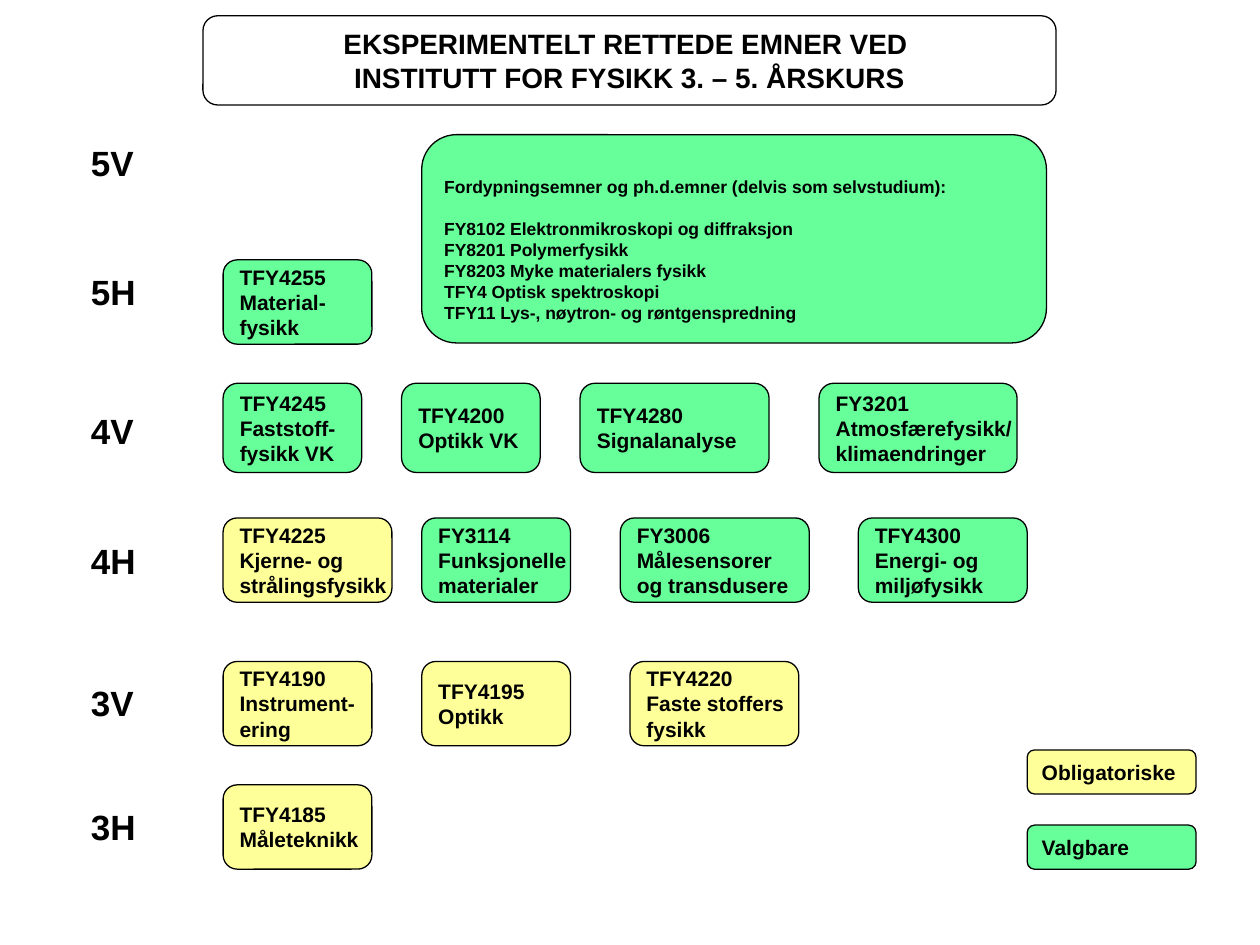
"""Build the one-slide overview of experimental physics courses by term."""
from pptx import Presentation
from pptx import util as u
from pptx.dml import color
from pptx.enum import shapes, text

COLORS = {"required": "FFFF99", "elective": "66FF99", "ink": "000000"}
LABEL_LEFT, FIRST_LEFT, SECOND_LEFT = 42.5, 127.5, 241
LABEL_WIDTH, BOX_HEIGHT = 85, 48.2

TERMS = [("5V", 69), ("5H", 142.5), ("4V", 222), ("4H", 296), ("3V", 377.5), ("3H", 448.5)]

COURSE_ROWS = [
    (148.5, BOX_HEIGHT, [
        (FIRST_LEFT, 85, "elective", ["TFY4255", "Material-", "fysikk"])]),
    (219, 51, [
        (FIRST_LEFT, 79.2, "elective", ["TFY4245", "Faststoff-", "fysikk VK"]),
        (229.5, 79.2, "elective", ["TFY4200", "Optikk VK"]),
        (331.5, 108, "elective", ["TFY4280", "Signalanalyse"]),
        (468, 113.2, "elective", ["FY3201", "Atmosfærefysikk/", "klimaendringer"])]),
    (296, BOX_HEIGHT, [
        (FIRST_LEFT, 96.5, "required", ["TFY4225", "Kjerne- og", "strålingsfysikk"]),
        (SECOND_LEFT, 85, "elective", ["FY3114", "Funksjonelle", "materialer"]),
        (354.5, 108, "elective", ["FY3006", "Målesensorer", "og transdusere"]),
        (490.5, 96.5, "elective", ["TFY4300", "Energi- og", "miljøfysikk"])]),
    (378, BOX_HEIGHT, [
        (FIRST_LEFT, 85, "required", ["TFY4190", "Instrument-", "ering"]),
        (SECOND_LEFT, 85, "required", ["TFY4195", "Optikk"]),
        (360, 96.5, "required", ["TFY4220", "Faste stoffers", "fysikk"])]),
    (448.5, BOX_HEIGHT, [
        (FIRST_LEFT, 85, "required", ["TFY4185", "Måleteknikk"])]),
]

LEGEND = [("required", "Obligatoriske"), ("elective", "Valgbare")]

TITLE = ["EKSPERIMENTELT RETTEDE EMNER VED ", "INSTITUTT FOR FYSIKK 3. – 5. ÅRSKURS"]

ADVANCED = [
    "Fordypningsemner og ph.d.emner (delvis som selvstudium):",
    "FY8102 Elektronmikroskopi og diffraksjon",
    "FY8201 Polymerfysikk",
    "FY8203 Myke materialers fysikk",
    "TFY4 Optisk spektroskopi",
    "TFY11 Lys-, nøytron- og røntgenspredning",
]


def rgb(name):
    return color.RGBColor.from_string(COLORS[name])


def write_lines(frame, lines, size, align):
    for index, line in enumerate(lines):
        para = frame.paragraphs[0] if index == 0 else frame.add_paragraph()
        para.alignment = align
        span = para.add_run()
        span.text = line
        font_format = {"name": "Arial", "size": u.Pt(size), "bold": True}
        for key, value in font_format.items():
            setattr(span.font, key, value)
        span.font.color.rgb = rgb("ink")


def add_box(page, place, lines, fill=None, outlined=True, size=12, align=text.PP_ALIGN.LEFT):
    box = page.shapes.add_shape(
        shapes.MSO_SHAPE.FLOWCHART_ALTERNATE_PROCESS, *(u.Pt(length) for length in place))
    box.shadow.inherit = False
    if fill:
        box.fill.solid()
        box.fill.fore_color.rgb = rgb(fill)
    else:
        box.fill.background()
    if outlined:
        box.line.color.rgb = rgb("ink")
        box.line.width = u.Pt(0.75)
    else:
        box.line.fill.background()
    frame_format = {"word_wrap": False, "vertical_anchor": text.MSO_ANCHOR.MIDDLE}
    for key, value in frame_format.items():
        setattr(box.text_frame, key, value)
    write_lines(box.text_frame, lines, size, align)
    return box


def add_term_labels(page):
    for term, top in TERMS:
        add_box(page, (LABEL_LEFT, top, LABEL_WIDTH, BOX_HEIGHT), [term], outlined=False, size=20)


def add_courses(page):
    for top, height, courses in COURSE_ROWS:
        for left, width, kind, lines in courses:
            add_box(page, (left, top, width, height), lines, kind)


def add_legend(page):
    for index, (kind, label) in enumerate(LEGEND):
        add_box(page, (587, 428.5 + 43 * index, 96.5, 25.2), [label], kind)


def add_advanced(page):
    box = add_box(page, (SECOND_LEFT, 77, 357, 119), ADVANCED, "elective", size=10)
    box.text_frame.margin_top = u.Pt(15.5)
    box.text_frame.paragraphs[1].space_before = u.Pt(12)


def main():
    deck = Presentation()
    deck.slide_width, deck.slide_height = u.Pt(720), u.Pt(540)
    page = deck.slides.add_slide(deck.slide_layouts[6])
    add_box(page, (116, 9, 487.5, 51), TITLE, size=16, align=text.PP_ALIGN.CENTER)
    add_term_labels(page)
    add_courses(page)
    add_advanced(page)
    add_legend(page)
    deck.save("out.pptx")


if __name__ == "__main__":
    main()
